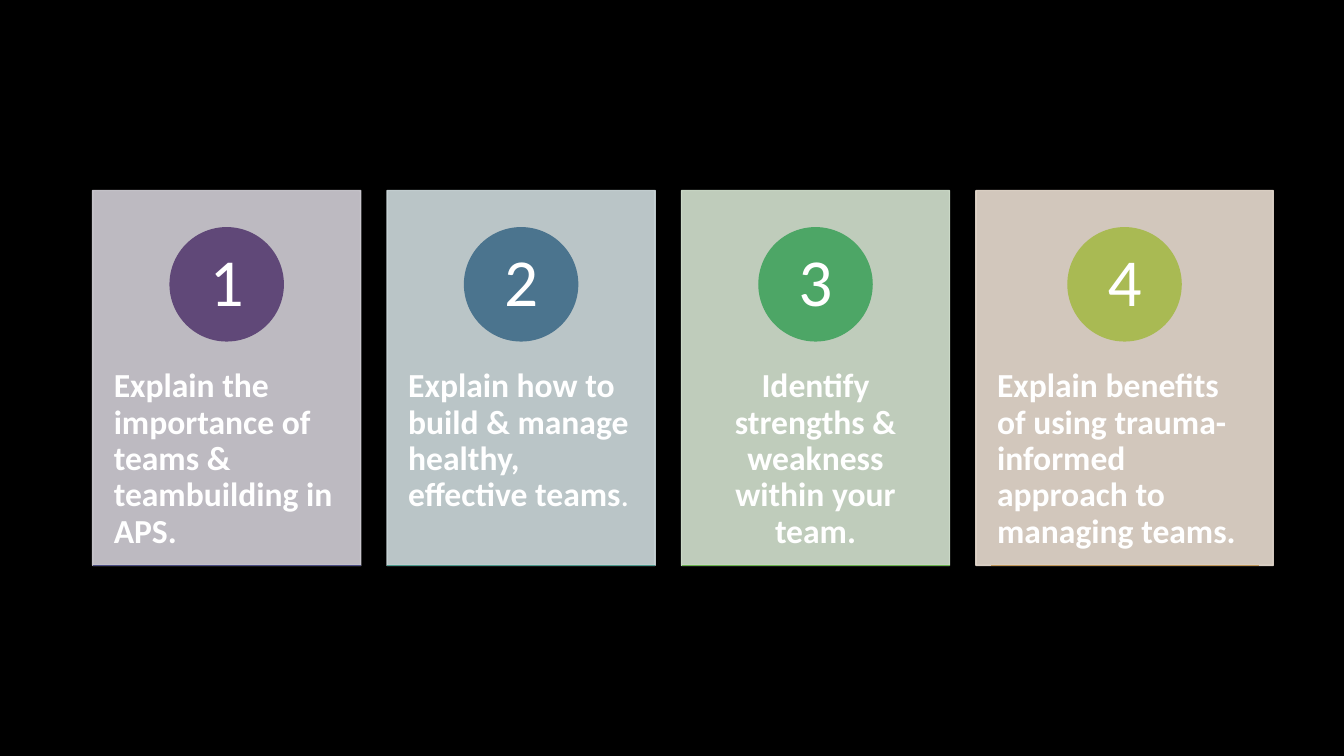
from lxml import etree
from pptx import Presentation
from pptx import util as u
from pptx.dml import color
from pptx.enum import shapes, text
from pptx.oxml import ns

Pt = u.Pt
TINT = {"1": "D2CFD6", "2": "CFDBDD", "3": "D4E3D0", "4": "E9DDD1"}
DISC = {"1": "604878", "2": "4B748E", "3": "4DA666", "4": "A9BA53"}
BASE = {"1": "4A4D83", "2": "4C9A8D", "3": "6AB34E", "4": "C19859"}
INK = {"back": "000000", "text": "FFFFFF"}

LEFT, TOP, STEP, HIGH = 66.2, 136.1, 210.3, 267.8
WIDE, LAST = 191.5, 212.4
DIAM = 80.8

GOALS = [
    ("1", "Explain the importance of teams & teambuilding in APS.", ""),
    ("2", "Explain how to build & manage healthy, effective teams", "."),
    ("3", "Identify strengths & weakness within your team.", ""),
    ("4", "Explain benefits of using trauma-informed approach to managing teams.", ""),
]


def paint(shape, tone):
    """Give a shape one colour for fill and line, without shadow."""
    shape.shadow.inherit = False
    shape.fill.solid()
    shape.fill.fore_color.rgb = color.RGBColor.from_string(tone)
    shape.line.color.rgb = color.RGBColor.from_string(tone)
    shape.line.width = Pt(1)


def style(para, size, bold, align):
    """Set font, spacing and alignment of a paragraph."""
    para.font.name = "Calibri"
    para.font.size = Pt(size)
    para.font.bold = bold
    para.font.color.rgb = color.RGBColor.from_string(INK["text"])
    para.line_spacing = 0.9
    para.alignment = align


# Slide with a black background
deck = Presentation()
deck.slide_width, deck.slide_height = Pt(960), Pt(540)
slide = deck.slides.add_slide(deck.slide_layouts[6])
slide.background.fill.solid()
slide.background.fill.fore_color.rgb = color.RGBColor.from_string(INK["back"])

for i, (num, goal, tail) in enumerate(GOALS):
    left = LEFT + i * STEP
    wide = LAST if num == "4" else WIDE
    mid = left + wide / 2

    # Card, slightly see-through
    card = slide.shapes.add_shape(
        shapes.MSO_SHAPE.RECTANGLE, Pt(left), Pt(TOP), Pt(wide), Pt(HIGH))
    paint(card, TINT[num])
    for tint in card._element.spPr.iter(ns.qn("a:srgbClr")):
        etree.SubElement(tint, ns.qn("a:alpha"), val="90000")

    # Goal text
    box = slide.shapes.add_textbox(Pt(left), Pt(237.6), Pt(wide), Pt(160.6))
    frame = box.text_frame
    frame.word_wrap = True
    frame.margin_left = frame.margin_right = Pt(15.1)
    frame.margin_top = frame.margin_bottom = Pt(25.9)
    para = frame.paragraphs[0]
    para.add_run().text = goal
    style(para, 24, True,
          text.PP_ALIGN.CENTER if num == "3" else text.PP_ALIGN.LEFT)
    if tail:
        run = para.add_run()
        run.text = tail
        run.font.bold = False

    # Numbered disc
    disc = slide.shapes.add_shape(
        shapes.MSO_SHAPE.OVAL, Pt(mid - DIAM / 2), Pt(162.7), Pt(DIAM), Pt(DIAM))
    paint(disc, DISC[num])
    frame = disc.text_frame
    frame.margin_left = frame.margin_right = 0
    frame.margin_top = frame.margin_bottom = 0
    frame.vertical_anchor = text.MSO_ANCHOR.MIDDLE
    frame.text = num
    style(frame.paragraphs[0], 48, False, text.PP_ALIGN.CENTER)

    # Base line
    foot = Pt(TOP + HIGH)
    base = slide.shapes.add_connector(
        shapes.MSO_CONNECTOR.STRAIGHT,
        Pt(mid - WIDE / 2), foot, Pt(mid + WIDE / 2), foot)
    base.line.color.rgb = color.RGBColor.from_string(BASE[num])
    base.line.width = Pt(1)
    etree.SubElement(base._element.spPr, ns.qn("a:effectLst"))

deck.save("out.pptx")
